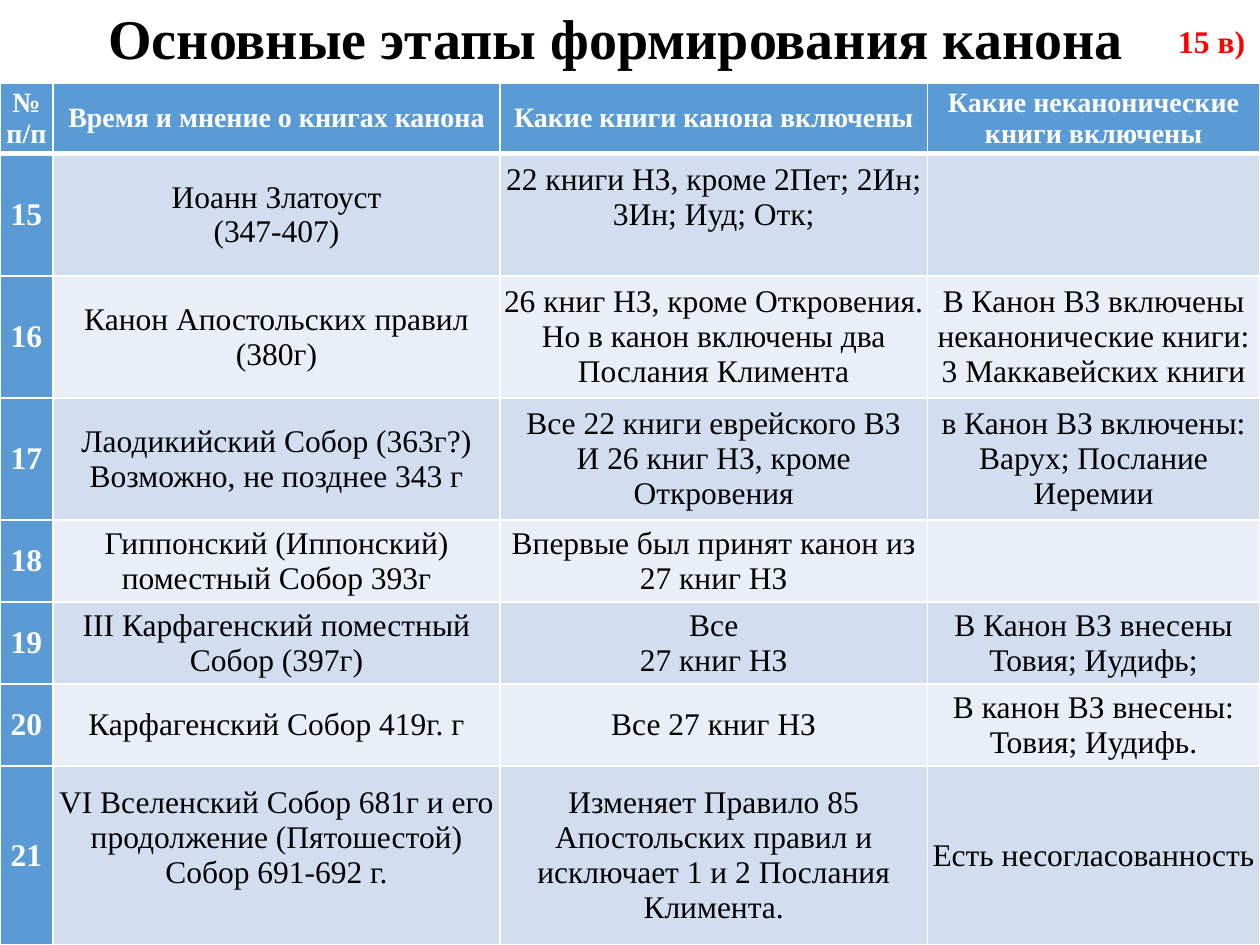
from lxml import etree
from pptx import Presentation
from pptx.dml.color import RGBColor
from pptx.enum.text import MSO_ANCHOR, PP_ALIGN
from pptx.oxml.ns import qn
from pptx.util import Inches, Pt

CENTER, RIGHT = PP_ALIGN.CENTER, PP_ALIGN.RIGHT
MIDDLE = MSO_ANCHOR.MIDDLE

THEME = {
    "font": "Times New Roman",
    "title_size": 32, "body_size": 18, "header_size": 16,
    "text": "000000", "light": "FFFFFF", "label": "FF0000",
    "accent": "5B9BD5", "bands": ("D2DEEF", "EAEFF7"),
    "rule": 1, "header_rule": 3,
}

# Content: a line break inside a cell starts a new paragraph
TITLE = "Основные этапы формирования канона"
LABEL = "15 в)"
HEADER = ("№ п/п", "Время и мнение о книгах канона",
          "Какие книги канона включены", "Какие неканонические книги включены")
STAGES = [
    ("Иоанн Златоуст\n(347-407)",
     "22 книги НЗ, кроме 2Пет; 2Ин; 3Ин; Иуд; Отк;", ""),
    ("Канон Апостольских правил (380г)",
     "26 книг НЗ, кроме Откровения. Но в канон включены два Послания Климента",
     "В Канон ВЗ включены неканонические книги: 3 Маккавейских книги"),
    ("Лаодикийский Собор (363г?) Возможно, не позднее 343 г",
     "Все 22 книги еврейского ВЗ\nИ 26 книг НЗ, кроме Откровения",
     "в Канон ВЗ включены:\nВарух; Послание Иеремии"),
    ("Гиппонский (Иппонский) поместный Собор 393г",
     "Впервые был принят канон из 27 книг НЗ", ""),
    ("III Карфагенский поместный Собор (397г)",
     "Все\n27 книг НЗ", "В Канон ВЗ внесены Товия; Иудифь;"),
    ("Карфагенский Собор 419г. г",
     "Все 27 книг НЗ", "В канон ВЗ внесены: Товия; Иудифь."),
    ("VI Вселенский Собор 681г и его продолжение (Пятошестой) Собор 691-692 г.",
     "Изменяет Правило 85 Апостольских правил и исключает 1 и 2 Послания Климента.",
     "Есть несогласованность"),
]
FIRST_NUMBER = 15
COLUMN_WIDTHS = (0.42, 3.55, 3.39, 2.64)
ROW_HEIGHTS = (0.56, 0.97, 0.97, 0.97, 0.65, 0.65, 0.65, 1.42)
TABLE_TOP = 0.66
# Cells (row, column) whose text sits half a line above the middle
RAISED_CELLS = {(1, 2), (7, 1)}
RAISED_MARGIN = 0.28


def write(frame, text, size, color, bold, align=CENTER, line_spacing=None):
    for index, line in enumerate(text.split("\n")):
        para = frame.add_paragraph() if index else frame.paragraphs[0]
        para.alignment = align
        if line_spacing:
            para.line_spacing = line_spacing
        if not line:
            continue
        span = para.add_run()
        span.text = line
        span.font.name = THEME["font"]
        span.font.size = Pt(size)
        span.font.bold = bold
        span.font.color.rgb = RGBColor.from_string(color)


def add_text(page, bounds, *args, **options):
    box = page.shapes.add_textbox(*map(Inches, bounds))
    frame = box.text_frame
    frame.word_wrap = True
    frame.vertical_anchor = MIDDLE
    write(frame, *args, **options)


def set_borders(cell, widths):
    properties = cell._tc.get_or_add_tcPr()
    for index, (side, width) in enumerate(widths.items()):
        line = etree.Element(qn(f"a:{side}"), w=str(Pt(width)))
        fill = etree.SubElement(line, qn("a:solidFill"))
        etree.SubElement(fill, qn("a:srgbClr"), val=THEME["light"])
        properties.insert(index, line)


def style_cell(cell, row, column):
    is_header, is_number = row == 0, column == 0
    cell.margin_left = cell.margin_right = Inches(0.01)
    cell.margin_top = 0
    cell.margin_bottom = Inches(RAISED_MARGIN if (row, column) in RAISED_CELLS else 0)
    cell.vertical_anchor = MIDDLE
    fill = THEME["accent"] if is_header or is_number else THEME["bands"][(row - 1) % 2]
    cell.fill.solid()
    cell.fill.fore_color.rgb = RGBColor.from_string(fill)
    rule, heavy = THEME["rule"], THEME["header_rule"]
    set_borders(cell, {"lnL": rule, "lnR": rule,
                       "lnT": heavy if row == 1 else rule,
                       "lnB": heavy if is_header else rule})


def add_stage_table(page):
    rows = [HEADER] + [(str(number), *stage)
                       for number, stage in enumerate(STAGES, FIRST_NUMBER)]
    table = page.shapes.add_table(
        len(rows), len(HEADER), 0, Inches(TABLE_TOP),
        Inches(sum(COLUMN_WIDTHS)), Inches(sum(ROW_HEIGHTS))).table
    for column, width in zip(table.columns, COLUMN_WIDTHS):
        column.width = Inches(width)
    for row, height in zip(table.rows, ROW_HEIGHTS):
        row.height = Inches(height)
    for row, texts in enumerate(rows):
        for column, text in enumerate(texts):
            cell = table.cell(row, column)
            style_cell(cell, row, column)
            strong = row == 0 or column == 0
            write(cell.text_frame, text,
                  THEME["header_size" if row == 0 else "body_size"],
                  THEME["light" if strong else "text"], strong)


def main():
    deck = Presentation()
    deck.slide_width, deck.slide_height = Inches(10), Inches(7.5)
    page = deck.slides.add_slide(deck.slide_layouts[6])

    # Table of stages
    add_stage_table(page)

    # Title and corner label
    add_text(page, (0.58, 0.03, 8.62, 0.6), TITLE,
             THEME["title_size"], THEME["text"], True, line_spacing=0.9)
    add_text(page, (9.21, 0.11, 0.77, 0.43), LABEL,
             THEME["body_size"], THEME["label"], True, align=RIGHT)

    deck.save("out.pptx")


if __name__ == "__main__":
    main()
